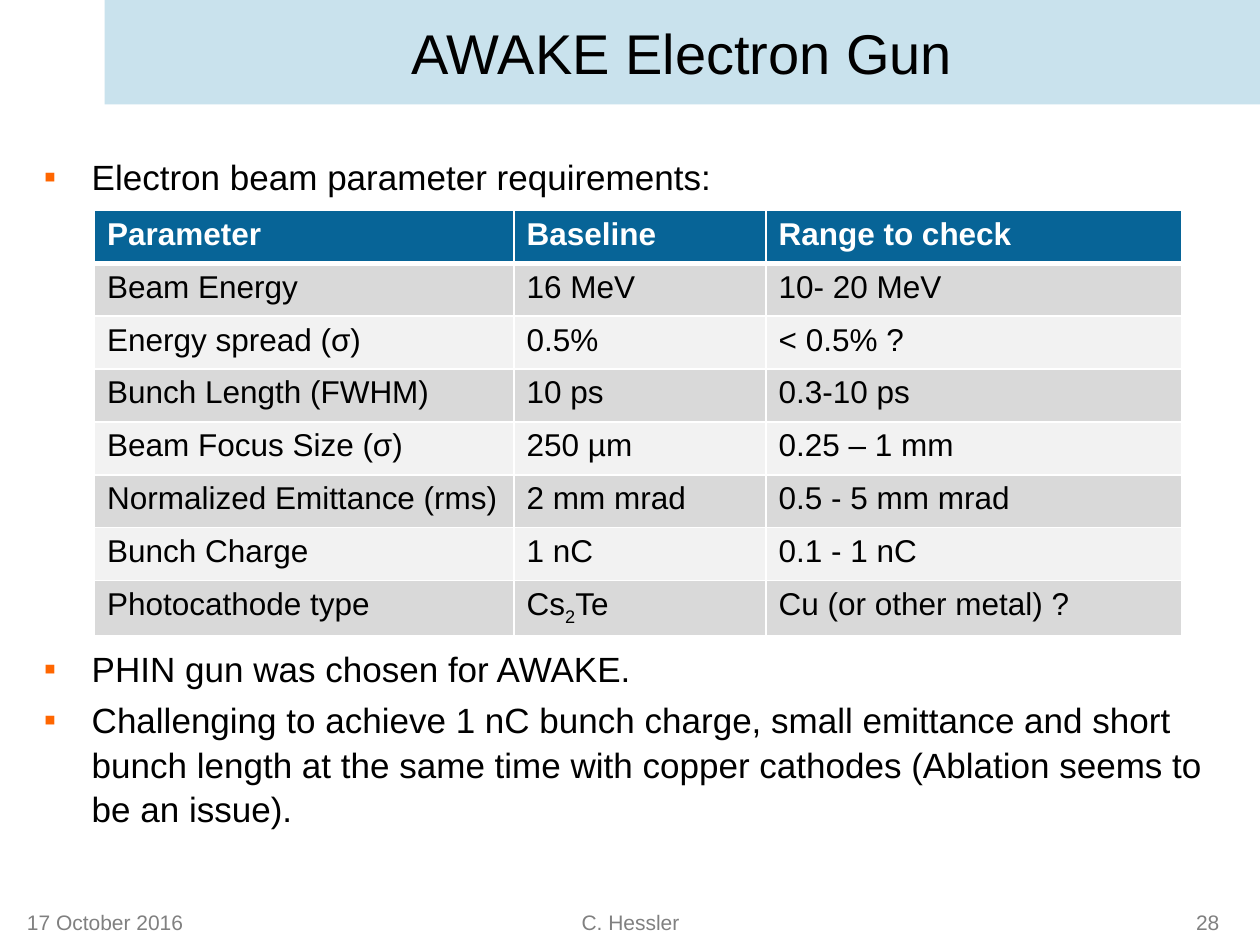
from dataclasses import dataclass

from lxml.etree import SubElement
from pptx import Presentation
from pptx.dml.color import RGBColor
from pptx.enum.shapes import MSO_SHAPE
from pptx.enum.text import MSO_ANCHOR, PP_ALIGN
from pptx.oxml.ns import qn
from pptx.util import Inches, Pt

FONT = "Arial"
BLACK, WHITE, GRAY = "000000", "FFFFFF", "808080"
PALE_BLUE, HEADER_BLUE, ORANGE = "C9E2ED", "076497", "FF6600"
BANDS = ("D9D9D9", "F2F2F2")


@dataclass
class Box:
    left: float
    top: float
    width: float
    height: float

    def lengths(self) -> list:
        return [Inches(v) for v in (self.left, self.top, self.width, self.height)]


@dataclass
class Footer:
    text: str
    left: float
    width: float


@dataclass
class Bullet:
    text: str
    before: float = 0


FOOTERS = [
    Footer("17 October 2016", 0, 1.67),
    Footer("C. Hessler", 1.92, 6.17),
    Footer("28", 9.17, 0.83),
]
BULLETS = [
    Bullet("Electron beam parameter requirements:"),
    Bullet("PHIN gun was chosen for AWAKE.", 256),
    Bullet(
        "Challenging to achieve 1 nC bunch charge, small emittance and short "
        "bunch length at the same time with copper cathodes (Ablation seems to "
        "be an issue).",
        4,
    ),
]
COLUMNS = (3.33, 2, 3.3)
ROW_HEIGHT = 0.42
ROWS = [
    ("Parameter", "Baseline", "Range to check"),
    ("Beam Energy", "16 MeV", "10- 20 MeV"),
    ("Energy spread (σ)", "0.5%", "< 0.5% ?"),
    ("Bunch Length (FWHM)", "10 ps", "0.3-10 ps"),
    ("Beam Focus Size (σ)", "250 µm", "0.25 – 1 mm"),
    ("Normalized Emittance (rms)", "2 mm mrad", "0.5 - 5 mm mrad"),
    ("Bunch Charge", "1 nC", "0.1 - 1 nC"),
    ("Photocathode type", "Cs|2|Te", "Cu (or other metal) ?"),
]


def rgb(value: str) -> RGBColor:
    return RGBColor.from_string(value)


def write(p, text: str, *, size: float, color: str = BLACK, bold: bool = False,
          align=PP_ALIGN.LEFT) -> None:
    """Fill a paragraph; text between bars is subscript."""
    p.alignment = align
    for i, part in enumerate(text.split("|")):
        r = p.add_run()
        r.text = part
        r.font.name, r.font.size, r.font.bold = FONT, Pt(size), bold
        r.font.color.rgb = rgb(color)
        if i % 2:
            r.font._element.set("baseline", "-25000")


def add_text_box(s, box: Box):
    tf = s.shapes.add_textbox(*box.lengths()).text_frame
    tf.word_wrap = True
    return tf


def add_title(s, text: str, box: Box) -> None:
    sp = s.shapes.add_shape(MSO_SHAPE.RECTANGLE, *box.lengths())
    sp.shadow.inherit = False
    sp.fill.solid()
    sp.fill.fore_color.rgb = rgb(PALE_BLUE)
    sp.line.fill.background()
    tf = sp.text_frame
    tf.vertical_anchor = MSO_ANCHOR.MIDDLE
    write(tf.paragraphs[0], text, size=32, align=PP_ALIGN.CENTER)


def set_bullet(p) -> None:
    pPr = p._p.get_or_add_pPr()
    pPr.set("marL", str(Inches(0.38)))
    pPr.set("indent", str(-Inches(0.38)))
    SubElement(SubElement(pPr, qn("a:buClr")), qn("a:srgbClr"), val=ORANGE)
    SubElement(pPr, qn("a:buFont"), typeface=FONT)
    SubElement(pPr, qn("a:buChar"), char="▪")


def add_bullets(s, bullets: list[Bullet], box: Box) -> None:
    tf = add_text_box(s, box)
    for i, bullet in enumerate(bullets):
        p = tf.add_paragraph() if i else tf.paragraphs[0]
        set_bullet(p)
        p.line_spacing = 1.05
        if bullet.before:
            p.space_before = Pt(bullet.before)
        write(p, bullet.text, size=20)


def set_borders(cell, bottom: float, top: float) -> None:
    tcPr = cell._tc.get_or_add_tcPr()
    widths = {"a:lnL": 1, "a:lnR": 1, "a:lnT": top, "a:lnB": bottom}
    for i, (tag, width) in enumerate(widths.items()):
        ln = tcPr.makeelement(qn(tag), {"w": str(Pt(width))})
        SubElement(SubElement(ln, qn("a:solidFill")), qn("a:srgbClr"), val=WHITE)
        tcPr.insert(i, ln)


def add_parameter_table(s, rows: list, left: float, top: float) -> None:
    box = Box(left, top, sum(COLUMNS), ROW_HEIGHT * len(rows))
    table = s.shapes.add_table(len(rows), len(COLUMNS), *box.lengths()).table
    for column, width in zip(table.columns, COLUMNS):
        column.width = Inches(width)
    for i, row in enumerate(rows):
        table.rows[i].height = Inches(ROW_HEIGHT)
        header = i == 0
        for j, text in enumerate(row):
            cell = table.cell(i, j)
            cell.fill.solid()
            cell.fill.fore_color.rgb = rgb(HEADER_BLUE if header else BANDS[(i - 1) % 2])
            set_borders(cell, bottom=3 if header else 1, top=3 if i == 1 else 1)
            write(cell.text_frame.paragraphs[0], text, size=18, bold=header,
                  color=WHITE if header else BLACK)


def main() -> None:
    prs = Presentation()
    prs.slide_width, prs.slide_height = Inches(10), Inches(7.5)
    s = prs.slides.add_slide(prs.slide_layouts[6])
    add_title(s, "AWAKE Electron Gun", Box(0.83, 0, 9.17, 0.83))
    add_bullets(s, BULLETS, Box(0.25, 1.17, 9.5, 5.75))
    for footer in FOOTERS:
        tf = add_text_box(s, Box(footer.left, 7.17, footer.width, 0.33))
        write(tf.paragraphs[0], footer.text, size=12, color=GRAY, align=PP_ALIGN.CENTER)
    add_parameter_table(s, ROWS, 0.75, 1.67)
    prs.save("out.pptx")


if __name__ == "__main__":
    main()
